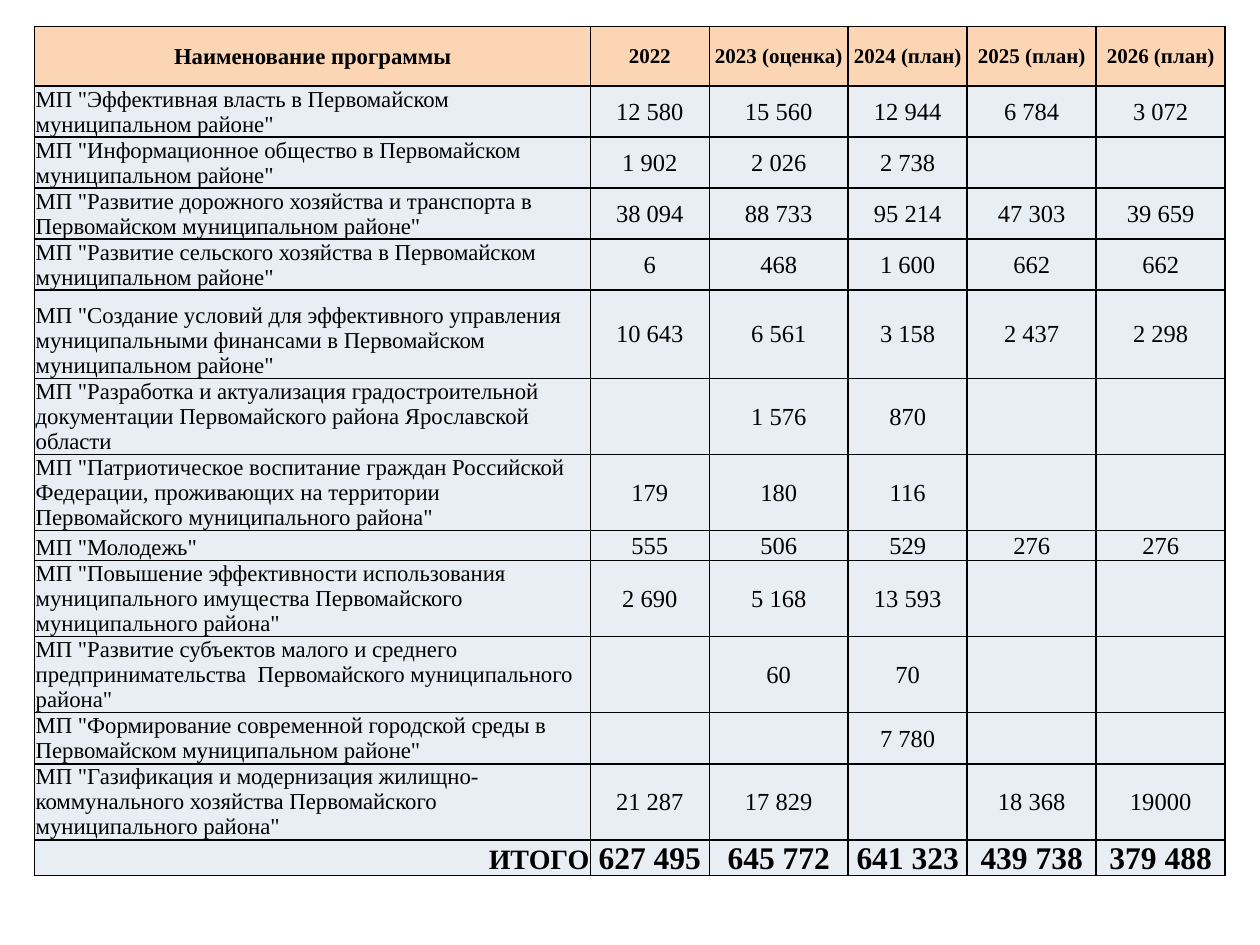
from lxml import etree
from pptx import Presentation
from pptx.dml.color import RGBColor
from pptx.enum import text
from pptx.oxml.ns import qn
from pptx.util import Cm, Inches, Pt

FONT = "Times New Roman"
BLACK, PEACH, PALE = "000000", "FCD5B5", "E9EDF4"
LEFT, TOP, HEADER_HEIGHT = 0.7, 0.53, 1.2
COLUMNS = [11.2, 2.4, 2.8, 2.4, 2.6, 2.6]
ONE_LINE, TWO_LINES, THREE_LINES, TALL, TOTAL_HEIGHT = 0.61, 1.02, 1.53, 1.78, 0.72

HEADER = ["Наименование программы", "2022", "2023 (оценка)",
          "2024 (план)", "2025 (план)", "2026 (план)"]

# Row height, programme, amounts by year
PROGRAMMES = [
    (TWO_LINES, 'МП "Эффективная власть в Первомайском муниципальном районе"',
     ["12 580", "15 560", "12 944", "6 784", "3 072"]),
    (TWO_LINES, 'МП "Информационное общество в Первомайском муниципальном районе"',
     ["1 902", "2 026", "2 738", "", ""]),
    (TWO_LINES, 'МП "Развитие дорожного хозяйства и транспорта в '
     'Первомайском муниципальном районе"',
     ["38 094", "88 733", "95 214", "47 303", "39 659"]),
    (TWO_LINES, 'МП "Развитие сельского хозяйства в Первомайском муниципальном районе"',
     ["6", "468", "1 600", "662", "662"]),
    (TALL, 'МП "Создание условий для эффективного управления муниципальными '
     'финансами в Первомайском муниципальном районе"',
     ["10 643", "6 561", "3 158", "2 437", "2 298"]),
    (THREE_LINES, 'МП "Разработка и актуализация градостроительной документации '
     'Первомайского района Ярославской области',
     ["", "1 576", "870", "", ""]),
    (THREE_LINES, 'МП "Патриотическое воспитание граждан Российской Федерации, '
     'проживающих на территории Первомайского муниципального района"',
     ["179", "180", "116", "", ""]),
    (ONE_LINE, 'МП "Молодежь"', ["555", "506", "529", "276", "276"]),
    (THREE_LINES, 'МП "Повышение эффективности использования муниципального '
     'имущества Первомайского муниципального района"',
     ["2 690", "5 168", "13 593", "", ""]),
    (THREE_LINES, 'МП "Развитие субъектов малого и среднего предпринимательства  '
     'Первомайского муниципального района"',
     ["", "60", "70", "", ""]),
    (TWO_LINES, 'МП "Формирование современной городской среды в '
     'Первомайском муниципальном районе"',
     ["", "", "7 780", "", ""]),
    (THREE_LINES, 'МП "Газификация и модернизация жилищно-коммунального хозяйства '
     'Первомайского муниципального района"',
     ["21 287", "17 829", "", "18 368", "19000"]),
]
TOTAL = ["ИТОГО", "627 495", "645 772", "641 323", "439 738", "379 488"]


def rgb(value):
    return RGBColor.from_string(value)


def add_borders(cell, color=BLACK, width=1):
    tc_pr = cell._tc.get_or_add_tcPr()
    for side in ("lnL", "lnR", "lnT", "lnB"):
        line = etree.SubElement(tc_pr, qn(f"a:{side}"), w=str(Pt(width)))
        fill = etree.SubElement(line, qn("a:solidFill"))
        etree.SubElement(fill, qn("a:srgbClr"), val=color)


def fill_cell(cell, content, size, fill, align, anchor, bold):
    add_borders(cell)
    cell.fill.solid()
    cell.fill.fore_color.rgb = rgb(fill)
    cell.margin_left = cell.margin_right = cell.margin_top = Cm(0.02)
    cell.margin_bottom = 0
    cell.vertical_anchor = anchor
    p = cell.text_frame.paragraphs[0]
    p.text = content
    p.alignment = align
    p.font.name = FONT
    p.font.size = Pt(size)
    p.font.bold = bold
    p.font.color.rgb = rgb(BLACK)


def fill_row(table, index, values, sizes, fill=PALE, bold=False,
             align=text.PP_ALIGN.LEFT, anchor=text.MSO_ANCHOR.BOTTOM):
    """The first cell takes the given alignment; the others are centred."""
    for column, value in enumerate(values):
        first = column == 0
        fill_cell(table.cell(index, column), value, sizes[0 if first else 1], fill,
                  align if first else text.PP_ALIGN.CENTER,
                  anchor if first else text.MSO_ANCHOR.MIDDLE, bold)


def add_grid(slide, top, heights):
    frame = slide.shapes.add_table(len(heights), len(COLUMNS), Cm(LEFT), Cm(top),
                                   Cm(sum(COLUMNS)), Cm(sum(heights)))
    table = frame.table
    table.first_row = table.horz_banding = False
    for column, width in zip(table.columns, COLUMNS):
        column.width = Cm(width)
    for row, height in zip(table.rows, heights):
        row.height = Cm(height)
    return table


def main():
    prs = Presentation()
    prs.slide_width, prs.slide_height = Inches(10), Inches(7.5)
    s = prs.slides.add_slide(prs.slide_layouts[6])

    # Header table
    header = add_grid(s, TOP, [HEADER_HEIGHT])
    fill_row(header, 0, HEADER, (13, 12), PEACH, True,
             text.PP_ALIGN.CENTER, text.MSO_ANCHOR.MIDDLE)

    # Programmes, then the total
    heights = [height for height, _, _ in PROGRAMMES] + [TOTAL_HEIGHT]
    body = add_grid(s, TOP + HEADER_HEIGHT, heights)
    for index, (_, name, amounts) in enumerate(PROGRAMMES):
        fill_row(body, index, [name, *amounts], (13, 14))
    fill_row(body, len(PROGRAMMES), TOTAL, (16, 18), bold=True,
             align=text.PP_ALIGN.RIGHT)

    prs.save("out.pptx")


if __name__ == "__main__":
    main()
